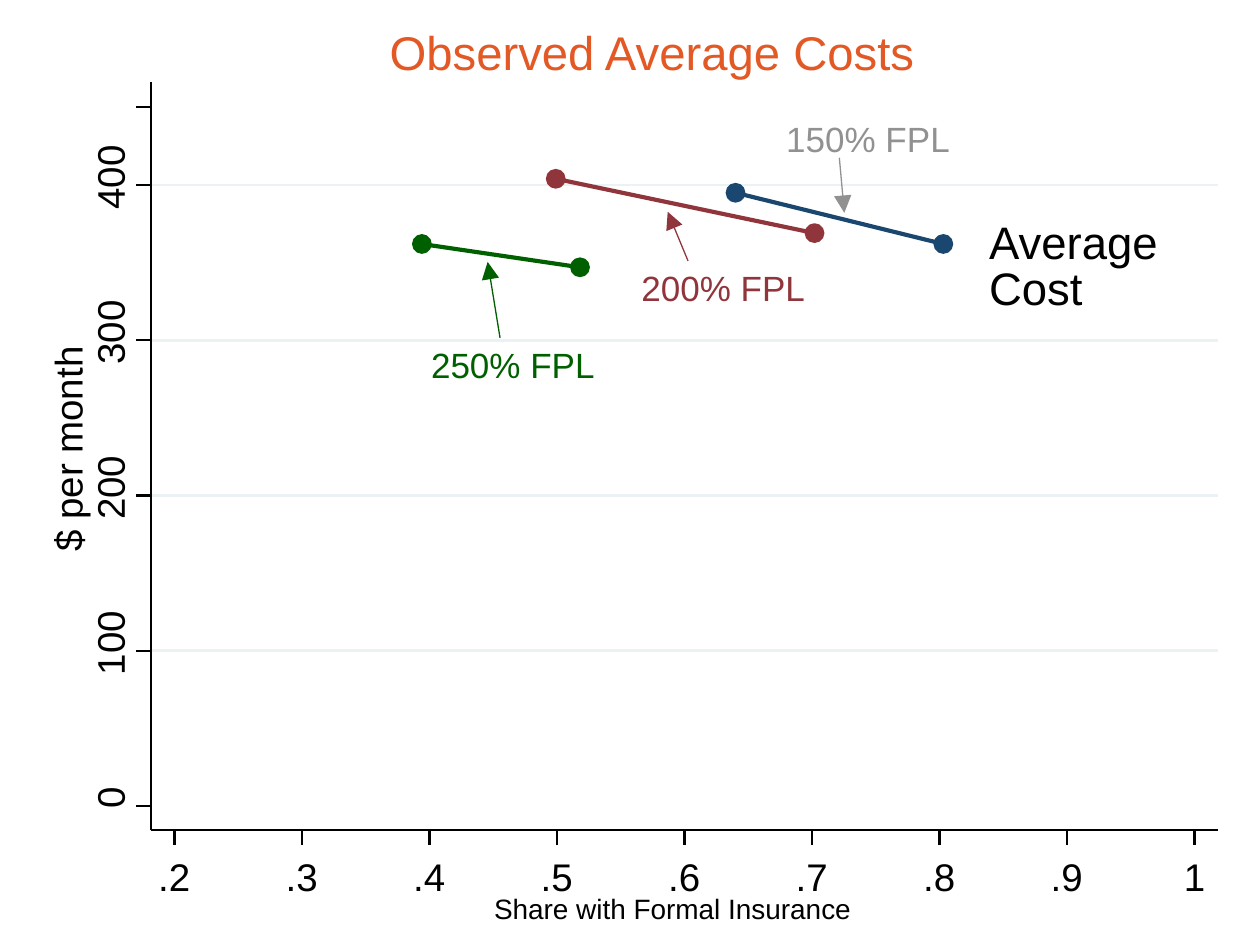
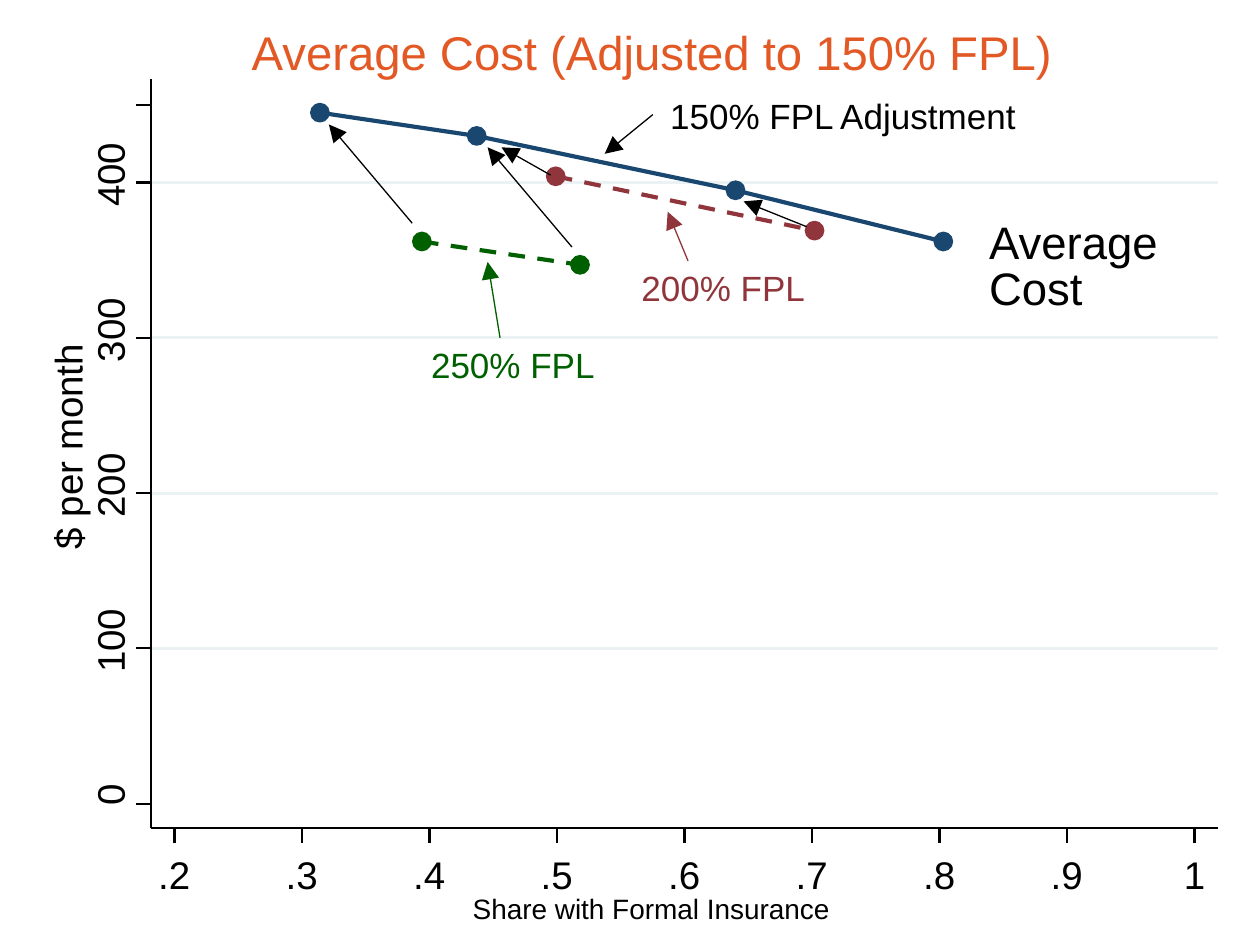
"""Build two slides on average insurance cost by income group."""
from dataclasses import dataclass
from itertools import pairwise

from lxml import etree
from pptx import Presentation
from pptx.dml.color import RGBColor
from pptx.enum.dml import MSO_LINE
from pptx.enum.shapes import MSO_CONNECTOR, MSO_SHAPE
from pptx.enum.text import MSO_ANCHOR, MSO_AUTO_SIZE, PP_ALIGN
from pptx.oxml.ns import qn
from pptx.util import Cm, Pt

STRAIGHT = MSO_CONNECTOR.STRAIGHT
RECTANGLE, OVAL = MSO_SHAPE.RECTANGLE, MSO_SHAPE.OVAL
DASH = MSO_LINE.DASH
TOP = MSO_ANCHOR.TOP
FIT_SHAPE = MSO_AUTO_SIZE.SHAPE_TO_FIT_TEXT
LEFT, CENTER = PP_ALIGN.LEFT, PP_ALIGN.CENTER


@dataclass(frozen=True)
class Theme:
    """Colours, type sizes and line widths shared by both slides."""

    font: str = "Arial"
    title: str = "E35925"
    ink: str = "000000"
    paper: str = "FFFFFF"
    grid: str = "EAF2F3"
    fpl150: str = "1A476F"
    fpl200: str = "90353B"
    fpl250: str = "006000"
    muted: str = "919191"
    title_size: int = 27
    curve_size: int = 26
    tick_size: int = 22
    note_size: int = 20
    caption_size: int = 16
    axis_width: float = 1.25
    grid_width: float = 1.63
    curve_width: float = 2.38
    arrow_width: float = 0.75


@dataclass(frozen=True)
class Box:
    """A region of the slide in centimetres."""

    left: float
    top: float
    width: float
    height: float

    @property
    def bottom(self):
        """Return the lower edge."""
        return self.top + self.height

    @property
    def right(self):
        """Return the right edge."""
        return self.left + self.width

    def lengths(self):
        """Return the four measures as slide lengths."""
        return [Cm(v) for v in (self.left, self.top, self.width, self.height)]


THEME = Theme()
PAGE = Box(0, 0, 25.4, 19.05)
TITLE_BOX = Box(3.17, 0.46, 19.94, 1.14)
PLOT_OBSERVED = Box(3.05, 1.65, 21.51, 15.09)
PLOT_ADJUSTED = Box(3.05, 1.6, 21.51, 15.09)

SHARE_START, SHARE_OFFSET, SHARE_STEP = 0.2, 0.47, 2.57
ZERO_RISE, HUNDRED_STEP = 0.49, 3.13
TICK_LENGTH, DOT = 0.3, 0.34
LABEL_HEIGHT, LABEL_LIFT = 0.94, 0.17

COST_150 = [(0.64, 395), (0.803, 362)]
COST_150_EXTENDED = [(0.314, 445), (0.437, 430), *COST_150]
COST_200 = [(0.499, 404), (0.702, 369)]
COST_250 = [(0.394, 362), (0.518, 347)]

SHARED_NOTES = [
    ("Average", Box(19.94, 4.32, 3.5, 1.14), THEME.curve_size, THEME.ink),
    ("Cost", Box(19.94, 5.24, 2.16, 1.12), THEME.curve_size, THEME.ink),
    ("200% FPL", Box(12.93, 5.38, 3.4, 0.86), THEME.note_size, THEME.fpl200),
    ("250% FPL", Box(8.69, 6.93, 3.4, 0.86), THEME.note_size, THEME.fpl250),
]
SHARED_ARROWS = [
    ((13.46, 4.27), (13.87, 5.26), THEME.fpl200),
    ((9.83, 5.28), (10.08, 6.81), THEME.fpl250),
]
OBSERVED_NOTES = [
    ("150% FPL", Box(15.85, 2.36, 3.4, 0.86), THEME.note_size, THEME.muted),
    ("Share with Formal Insurance", Box(9.96, 17.98, 7.29, 0.69),
     THEME.caption_size, THEME.ink),
]
OBSERVED_ARROWS = [((17.02, 4.29), (16.92, 3.18), THEME.muted)]
ADJUSTED_NOTES = [
    ("150% FPL Adjustment", Box(13.51, 1.9, 7.1, 0.86),
     THEME.note_size, THEME.ink),
    ("Share with Formal Insurance", Box(9.53, 17.98, 7.29, 0.69),
     THEME.caption_size, THEME.ink),
]
ADJUSTED_ARROWS = [
    ((12.19, 3.1), (13.16, 2.31), THEME.ink),
    ((14.99, 4.06), (16.26, 4.57), THEME.ink),
    ((6.63, 2.51), (8.31, 4.5), THEME.ink),
    ((9.83, 2.97), (11.53, 4.98), THEME.ink),
    ((10.11, 2.97), (11.1, 3.53), THEME.ink),
]


def apply(target, formats):
    """Set each named attribute of the target."""
    for attribute, value in formats.items():
        setattr(target, attribute, value)


def write(holder, text, size, color, align=LEFT, wrap=False):
    """Put one formatted line of text in a shape."""
    frame = holder.text_frame
    frame.text = text
    apply(frame, {
        "margin_left": 0, "margin_top": 0, "margin_right": 0,
        "margin_bottom": 0, "word_wrap": wrap, "auto_size": FIT_SHAPE,
        "vertical_anchor": TOP,
    })
    line = frame.paragraphs[0]
    line.alignment = align
    font = line.runs[0].font
    apply(font, {"name": THEME.font, "size": Pt(size)})
    font.color.rgb = RGBColor.from_string(color)


def add_label(slide, box, text, size, color, rotation=0):
    """Add a text box that keeps its text on one line."""
    label = slide.shapes.add_textbox(*box.lengths())
    label.rotation = rotation
    write(label, text, size, color)


def add_line(slide, start, end, color, width, dash=None, arrow=False):
    """Add a straight line, with an arrowhead at its start if asked."""
    line = slide.shapes.add_connector(
        STRAIGHT, *[Cm(v) for v in (*start, *end)])
    line.line.color.rgb = RGBColor.from_string(color)
    apply(line.line, {"width": Pt(width), "dash_style": dash})
    properties = line._element.spPr
    if arrow:
        etree.SubElement(properties.find(qn("a:ln")), qn("a:headEnd"),
                         type="triangle", w="lg", len="lg")
    etree.SubElement(properties, qn("a:effectLst"))


def add_solid(slide, preset, box, color, width):
    """Add a preset shape whose fill and outline share a colour."""
    solid = slide.shapes.add_shape(preset, *box.lengths())
    solid.shadow.inherit = False
    solid.fill.solid()
    for paint in (solid.fill.fore_color, solid.line.color):
        paint.rgb = RGBColor.from_string(color)
    solid.line.width = Pt(width)


def share_x(plot, share):
    """Return the horizontal place of an insured share."""
    return plot.left + SHARE_OFFSET + (share - SHARE_START) * 10 * SHARE_STEP


def cost_y(plot, cost):
    """Return the vertical place of a monthly cost."""
    return plot.bottom - ZERO_RISE - cost / 100 * HUNDRED_STEP


def add_background(slide, plot):
    """Draw the plot area and its gridlines."""
    add_solid(slide, RECTANGLE, plot, THEME.paper, THEME.axis_width)
    for cost in range(100, 401, 100):
        y = cost_y(plot, cost)
        add_line(slide, (plot.left, y), (plot.right, y),
                 THEME.grid, THEME.grid_width)


def add_cost_axis(slide, plot):
    """Draw the vertical axis with its ticks, labels and title."""
    add_line(slide, (plot.left, plot.bottom), (plot.left, plot.top),
             THEME.ink, THEME.axis_width)
    upright = [(str(cost), 0.84, cost_y(plot, cost), 1.32 if cost else 0.43)
               for cost in range(0, 401, 100)]
    upright.append(
        ("$ per month", 1.69, plot.top + plot.height / 2, 4.19))
    for text, gap, middle, width in upright:
        box = Box(plot.left - gap - width / 2,
                  middle - LABEL_LIFT - LABEL_HEIGHT / 2, width, LABEL_HEIGHT)
        add_label(slide, box, text, THEME.tick_size, THEME.ink, 270)
    for cost in (*range(0, 401, 100), 450):
        y = cost_y(plot, cost)
        add_line(slide, (plot.left, y), (plot.left - TICK_LENGTH, y),
                 THEME.ink, THEME.axis_width)


def add_share_axis(slide, plot):
    """Draw the horizontal axis with its ticks and labels."""
    add_line(slide, (plot.left, plot.bottom), (plot.right, plot.bottom),
             THEME.ink, THEME.axis_width)
    for tenth in range(2, 11):
        x = share_x(plot, tenth / 10)
        add_line(slide, (x, plot.bottom), (x, plot.bottom + TICK_LENGTH),
                 THEME.ink, THEME.axis_width)
        width = 0.66 if tenth < 10 else 0.43
        box = Box(x - width / 2, plot.bottom + 0.46, width, LABEL_HEIGHT)
        add_label(slide, box, f"{tenth / 10:g}".lstrip("0"),
                  THEME.tick_size, THEME.ink)


def add_curve(slide, plot, points, color, dash=None):
    """Draw one cost curve with a dot at each observation."""
    places = [(share_x(plot, share), cost_y(plot, cost))
              for share, cost in points]
    for start, end in pairwise(places):
        add_line(slide, start, end, color, THEME.curve_width, dash)
    for x, y in places:
        add_solid(slide, OVAL, Box(x - DOT / 2, y - DOT / 2, DOT, DOT),
                  color, THEME.grid_width)


def add_annotations(slide, page, notes, arrows):
    """Place the notes and arrows relative to the page."""
    for text, place, size, color in notes:
        box = Box(page.left + place.left, page.top + place.top,
                  place.width, place.height)
        add_label(slide, box, text, size, color)
    for tip, tail, color in arrows:
        start, end = [(page.left + x, page.top + y) for x, y in (tip, tail)]
        add_line(slide, start, end, color, THEME.arrow_width, arrow=True)


def add_title(slide, box, text):
    """Format the title placeholder and bring it in front of the plot."""
    title = slide.shapes.title
    apply(title, dict(zip(("left", "top", "width", "height"), box.lengths())))
    write(title, text, THEME.title_size, THEME.title, CENTER, wrap=True)
    title._element.getparent().append(title._element)


def add_cost_slide(deck, title, plot, curves, notes, arrows):
    """Add a slide with a title, a cost plot and its annotations."""
    slide = deck.slides.add_slide(deck.slide_layouts[5])
    add_background(slide, plot)
    for curve in curves:
        add_curve(slide, plot, *curve)
    add_cost_axis(slide, plot)
    add_share_axis(slide, plot)
    add_annotations(slide, PAGE, SHARED_NOTES + notes, SHARED_ARROWS + arrows)
    add_title(slide, TITLE_BOX, title)


def main():
    """Build and save the deck."""
    deck = Presentation()
    apply(deck, {"slide_width": Cm(PAGE.width),
                 "slide_height": Cm(PAGE.height)})
    add_cost_slide(
        deck, "Observed Average Costs", PLOT_OBSERVED,
        [(COST_150, THEME.fpl150), (COST_200, THEME.fpl200),
         (COST_250, THEME.fpl250)],
        OBSERVED_NOTES, OBSERVED_ARROWS)
    add_cost_slide(
        deck, "Average Cost (Adjusted to 150% FPL)", PLOT_ADJUSTED,
        [(COST_150_EXTENDED, THEME.fpl150), (COST_200, THEME.fpl200, DASH),
         (COST_250, THEME.fpl250, DASH)],
        ADJUSTED_NOTES, ADJUSTED_ARROWS)
    deck.save("out.pptx")


if __name__ == "__main__":
    main()
